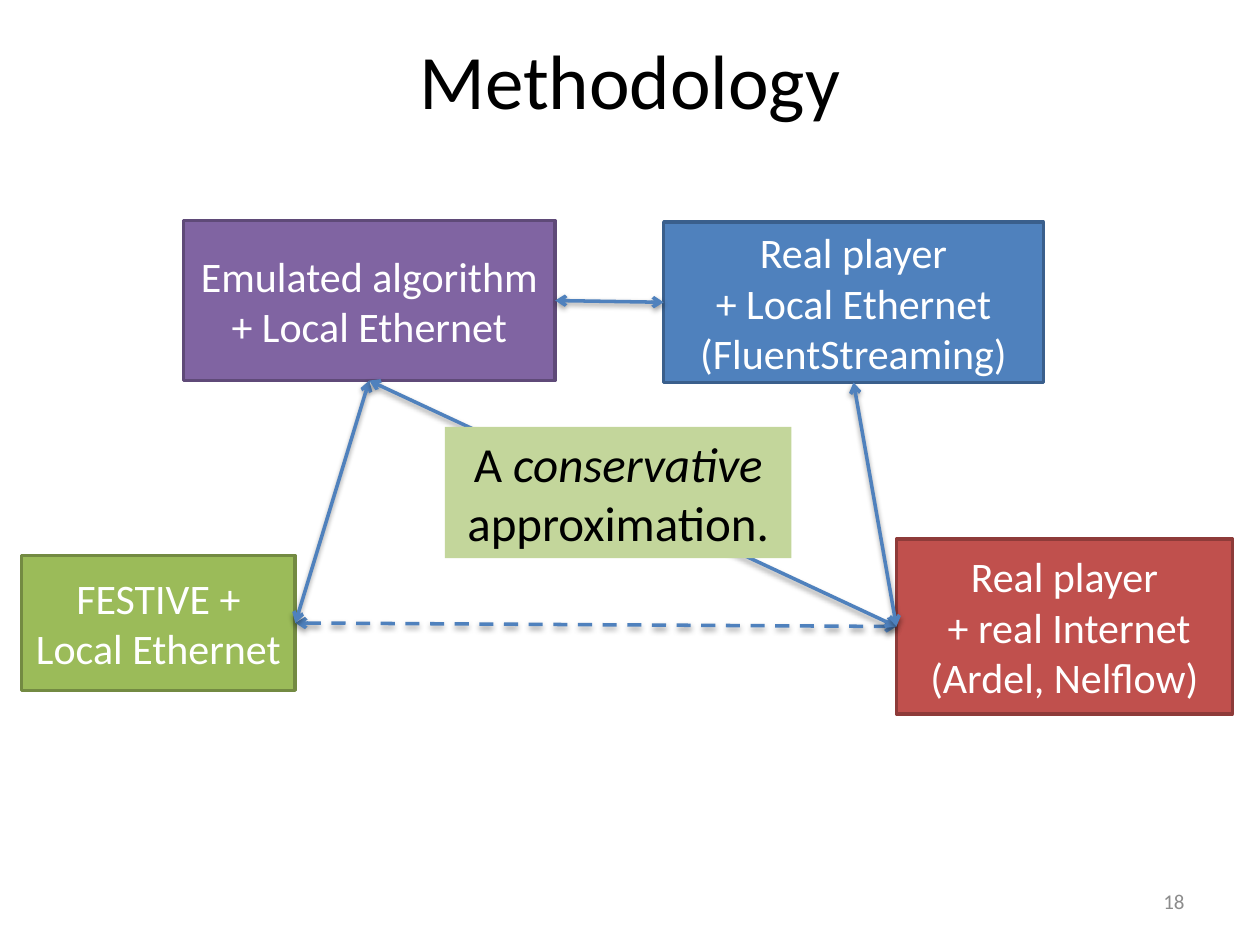
from dataclasses import dataclass

from lxml import etree
from pptx import Presentation
from pptx.dml.color import RGBColor
from pptx.enum import dml, shapes, text
from pptx.oxml import ns
from pptx.util import Pt


@dataclass(frozen=True)
class Theme:
    """Colours, font and type sizes of the slide."""
    font: str = "Calibri"
    title_size: int = 44
    note_size: int = 28
    box_size: int = 24
    number_size: int = 12
    line_width: int = 2
    dark: str = "000000"
    light: str = "FFFFFF"
    grey: str = "8C8C8C"
    arrow: str = "4F81BD"
    note: str = "C3D69B"
    green: tuple = ("9BBB59", "738A42")
    red: tuple = ("C0504D", "8E3B39")
    purple: tuple = ("8064A2", "5F4A78")
    blue: tuple = ("4F81BD", "3A5F8C")


THEME = Theme()
TOP, LEFT, BOTTOM, RIGHT = range(4)


def write_text(shape, paragraphs, size, color, align=text.PP_ALIGN.CENTER,
               anchor=text.MSO_ANCHOR.MIDDLE, italic=()):
    """Fill a shape with paragraphs, each a list of runs."""
    frame = shape.text_frame
    frame.word_wrap = True
    frame.vertical_anchor = anchor
    for index, runs in enumerate(paragraphs):
        paragraph = frame.add_paragraph() if index else frame.paragraphs[0]
        paragraph.alignment = align
        for words in runs:
            run = paragraph.add_run()
            run.text = words
            run.font.name = THEME.font
            run.font.size = Pt(size)
            run.font.italic = words in italic
            run.font.color.rgb = RGBColor.from_string(color)


def add_panel(slide, box, fill, outline=None):
    """Add a flat rectangle with an optional outline."""
    shape = slide.shapes.add_shape(shapes.MSO_SHAPE.RECTANGLE, *map(Pt, box))
    shape.shadow.inherit = False
    shape.fill.solid()
    shape.fill.fore_color.rgb = RGBColor.from_string(fill)
    if outline:
        shape.line.color.rgb = RGBColor.from_string(outline)
        shape.line.width = Pt(THEME.line_width)
    else:
        shape.line.fill.background()
    return shape


def add_setup(slide, box, colors, *lines):
    """Add one experiment setup as a labelled box."""
    shape = add_panel(slide, box, *colors)
    write_text(shape, [[line] for line in lines], THEME.box_size, THEME.light)
    return shape


def add_shadow(connector):
    """Give a connector a soft shadow below it."""
    effects = etree.SubElement(connector._element.spPr, ns.qn("a:effectLst"))
    shadow = etree.SubElement(
        effects, ns.qn("a:outerShdw"), blurRad=str(Pt(3.1)), dist=str(Pt(1.6)),
        dir="5400000", rotWithShape="0")
    color = etree.SubElement(shadow, ns.qn("a:srgbClr"), val=THEME.dark)
    etree.SubElement(color, ns.qn("a:alpha"), val="38000")


def add_link(slide, start, start_site, end, end_site, dashed=False):
    """Join two boxes with a double-headed arrow."""
    connector = slide.shapes.add_connector(
        shapes.MSO_CONNECTOR.STRAIGHT, 0, 0, 0, 0)
    connector.begin_connect(start, start_site)
    connector.end_connect(end, end_site)
    connector.line.color.rgb = RGBColor.from_string(THEME.arrow)
    connector.line.width = Pt(THEME.line_width)
    if dashed:
        connector.line.dash_style = dml.MSO_LINE.DASH
    for end_tag in ("a:headEnd", "a:tailEnd"):
        etree.SubElement(connector.get_or_add_ln(), ns.qn(end_tag), type="arrow")
    add_shadow(connector)


def add_title(slide, box, words):
    """Place the slide title in its placeholder."""
    title = slide.shapes.title
    title.left, title.top, title.width, title.height = map(Pt, box)
    write_text(title, [[words]], THEME.title_size, THEME.dark)


def add_number(slide, box, words):
    """Place the slide number."""
    number = slide.shapes.add_textbox(*map(Pt, box))
    write_text(number, [[words]], THEME.number_size, THEME.grey,
               align=text.PP_ALIGN.RIGHT)


def add_diagram(slide, box):
    """Draw the four setups and the comparisons between them."""
    left, top, width, height = box
    festive = add_setup(slide, (left, top + 191.5, 156.5, 77), THEME.green,
                        "FESTIVE + Local Ethernet")
    internet = add_setup(
        slide, (left + width - 192, top + height - 100, 192, 100), THEME.red,
        "Real player", " + real Internet", "(Ardel, Nelflow)")
    emulated = add_setup(slide, (left + 92.5, top, 212.5, 91.5), THEME.purple,
                         "Emulated algorithm + Local Ethernet")
    player = add_setup(
        slide, (left + 367, top + 1, 217, 91.5), THEME.blue,
        "Real player", "+ Local Ethernet", "(FluentStreaming)")
    add_link(slide, festive, RIGHT, internet, LEFT, dashed=True)
    for link in ((festive, RIGHT, emulated, BOTTOM),
                 (internet, LEFT, emulated, BOTTOM),
                 (player, LEFT, emulated, RIGHT),
                 (player, BOTTOM, internet, LEFT)):
        add_link(slide, *link)


def add_note(slide, box):
    """Place the conclusion over the diagram."""
    note = add_panel(slide, box, THEME.note)
    write_text(note, [["A ", "conservative", " approximation."]],
               THEME.note_size, THEME.dark, anchor=text.MSO_ANCHOR.TOP,
               italic=("conservative",))


def main():
    """Build and save the slide."""
    presentation = Presentation()
    presentation.slide_width, presentation.slide_height = Pt(720), Pt(540)
    slide = presentation.slides.add_slide(presentation.slide_layouts[5])
    add_title(slide, (36, 0, 648, 90), "Methodology")
    add_number(slide, (516, 500.5, 168, 28.75), "18")
    add_diagram(slide, (12.25, 126, 692, 282))
    add_note(slide, (254.25, 244, 198, 75))
    presentation.save("out.pptx")


if __name__ == "__main__":
    main()
